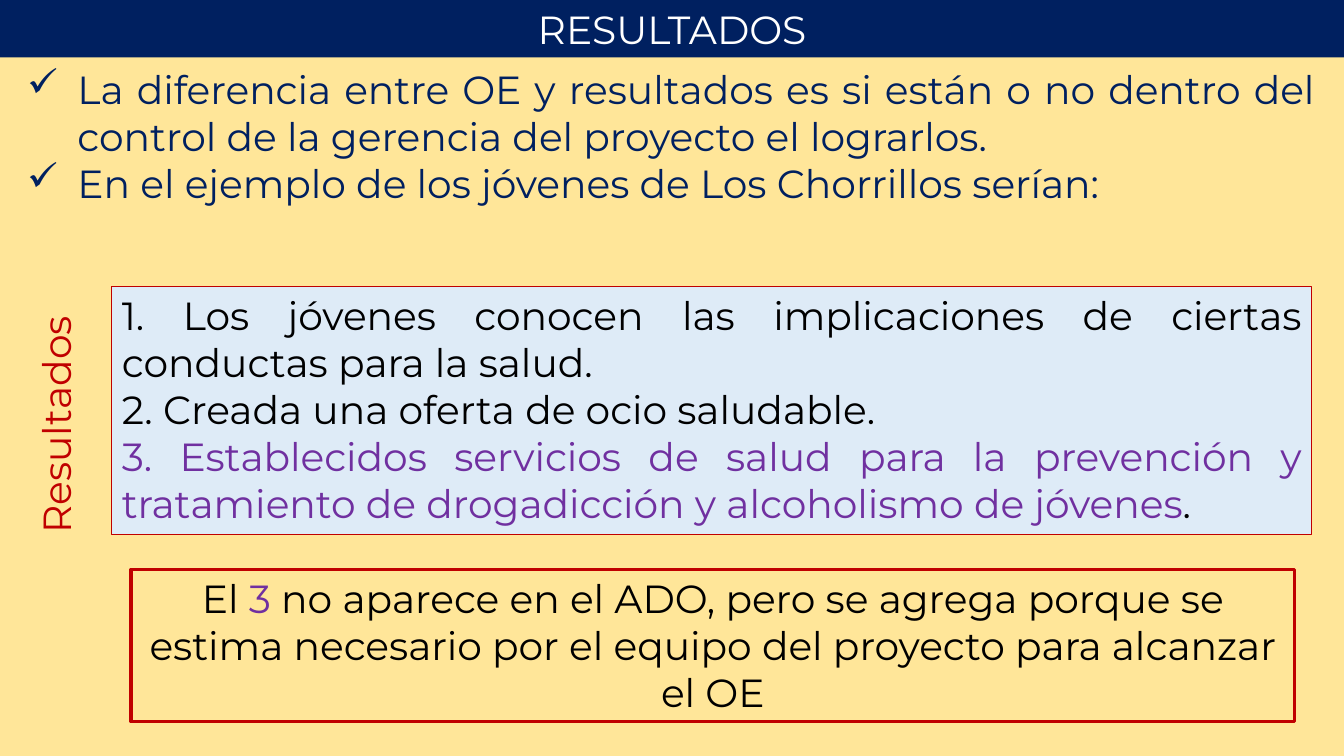
"""Build the RESULTADOS slide."""
import pptx
import pptx.dml.color
import pptx.enum.shapes
import pptx.enum.text
import pptx.oxml
import pptx.oxml.ns
import pptx.util

COLORS = {
    "sand": "FFE699", "navy": "002060", "ice": "DEEBF7", "red": "C00000",
    "purple": "7030A0", "white": "FFFFFF", "black": "000000",
}
ALIGN = pptx.enum.text.PP_ALIGN

presentation = pptx.Presentation()
presentation.slide_width = pptx.util.Inches(13.33)
presentation.slide_height = pptx.util.Inches(7.5)
slide = presentation.slides.add_slide(presentation.slide_layouts[6])


def rgb(name):
    return pptx.dml.color.RGBColor.from_string(COLORS[name])


def add_box(left, top, width, height, fill=None, line=None, weight=0,
            paragraphs=(), color="black", alignment=ALIGN.LEFT):
    """Add a rectangle placed in percent of the slide, with lists of (text, color) runs."""
    shape = slide.shapes.add_shape(
        pptx.enum.shapes.MSO_SHAPE.RECTANGLE,
        int(presentation.slide_width * left / 100),
        int(presentation.slide_height * top / 100),
        int(presentation.slide_width * width / 100),
        int(presentation.slide_height * height / 100))
    shape.shadow.inherit = False
    if fill:
        shape.fill.solid()
        shape.fill.fore_color.rgb = rgb(fill)
    else:
        shape.fill.background()
    if line:
        shape.line.color.rgb = rgb(line)
        shape.line.width = pptx.util.Pt(weight)
    else:
        shape.line.fill.background()
    frame = shape.text_frame
    frame.word_wrap = True
    frame.vertical_anchor = pptx.enum.text.MSO_ANCHOR.TOP
    for index, runs in enumerate(paragraphs):
        paragraph = frame.paragraphs[0] if index == 0 else frame.add_paragraph()
        paragraph.alignment = alignment
        paragraph.font.name = "Montserrat"
        paragraph.font.size = pptx.util.Pt(28)
        paragraph.font.color.rgb = rgb(color)
        for text, run_color in runs:
            run = paragraph.add_run()
            run.text = text
            run.font.name = "Montserrat"
            run.font.size = pptx.util.Pt(28)
            run.font.color.rgb = rgb(run_color or color)
    return shape


add_box(0, 0, 100, 100, fill="sand")
add_box(0, 0, 100, 7.6, fill="navy", color="white", alignment=ALIGN.CENTER,
        paragraphs=[[("RESULTADOS", None)]])

criteria = add_box(
    1.28, 8, 97.3, 26.53, color="navy", alignment=ALIGN.JUSTIFY,
    paragraphs=[
        [("La diferencia entre OE y resultados es si están o no dentro del "
          "control de la gerencia del proyecto el lograrlos.", None)],
        [("En el ejemplo de los jóvenes de Los Chorrillos serían: ", None)],
    ])
indent = pptx.util.Inches(0.5)
for paragraph in criteria.text_frame.paragraphs:
    properties = paragraph._p.get_or_add_pPr()
    properties.set("marL", str(indent))
    properties.set("indent", str(-indent))
    bullet = pptx.oxml.parse_xml(
        f'<a:buChar {pptx.oxml.ns.nsdecls("a")} char="✓"/>')
    properties.insert_element_before(bullet, "a:tabLst", "a:defRPr", "a:extLst")

add_box(
    8.33, 37.87, 89.27, 32.8, fill="ice", line="red", weight=0.75,
    alignment=ALIGN.JUSTIFY,
    paragraphs=[
        [("1. Los jóvenes conocen las implicaciones de ciertas conductas "
          "para la salud.", None)],
        [("2. Creada una oferta de ocio saludable.", None)],
        [("3. Establecidos servicios de salud para la prevención y tratamiento "
          "de drogadicción y alcoholismo de jóvenes", "purple"), (".", None)],
    ])

side_label = add_box(-5.85, 50.27, 20.03, 7.6, color="red",
                     paragraphs=[[("Resultados", None)]])
side_label.rotation = 270

add_box(
    9.75, 75.33, 86.57, 20.13, line="red", weight=2.25, alignment=ALIGN.CENTER,
    paragraphs=[[
        ("El ", None), ("3", "purple"),
        (" no aparece en el ADO, pero se agrega porque se estima necesario por "
         "el equipo del proyecto para alcanzar el OE", None),
    ]])

presentation.save("out.pptx")
